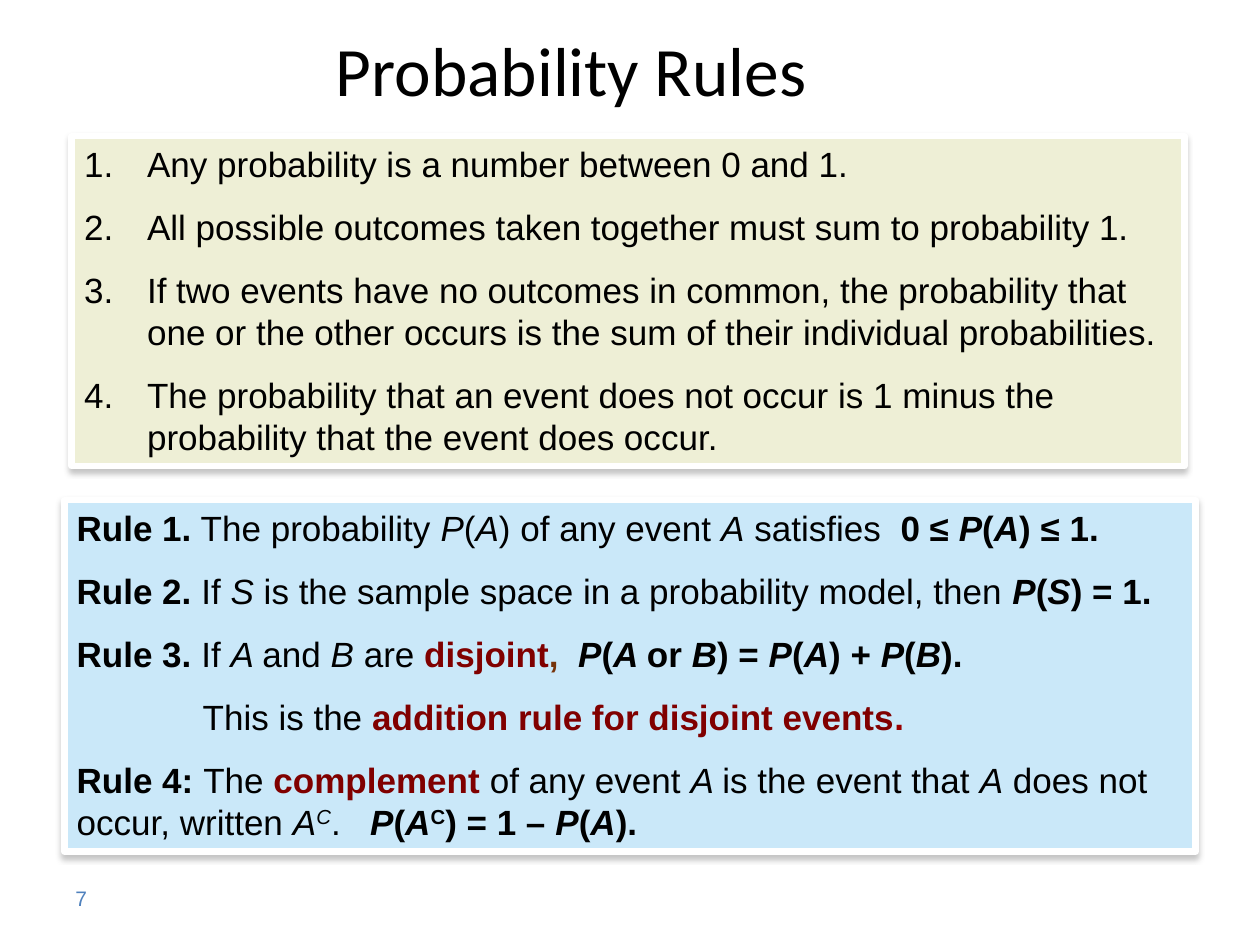
from lxml.etree import SubElement
from pptx import Presentation
from pptx.dml.color import RGBColor as RGB
from pptx.enum.shapes import MSO_SHAPE as Shape
from pptx.enum.text import MSO_ANCHOR as Anchor, MSO_AUTO_SIZE as Fit, PP_ALIGN as Align
from pptx.oxml.ns import qn
from pptx.util import Pt

INK = {"black": "000000", "red": "800000", "brown": "76330A", "wine": "990000",
       "page": "4F81BD", "sand": "EEEFD6", "sky": "CAE8F9",
       "edge": "FFFFFF", "shade": "808080"}

# Style letters: b bold, i italic, ^ superscript, r red, n brown, w wine
TONES = {"r": "red", "n": "brown", "w": "wine"}

BASICS = [
    "Any probability is a number between 0 and 1.",
    "All possible outcomes taken together must sum to probability 1.",
    "If two events have no outcomes in common, the probability that one or the "
    "other occurs is the sum of their individual probabilities.",
    "The probability that an event does not occur is 1 minus the probability "
    "that the event does occur.",
]


def prob(event, style=""):
    """Runs for P(event), up to but without the closing bracket."""
    return [("P", style + "i"), ("(", style), (event, style + "i")]


# Each rule is its left margin and its runs
RULES = [
    (0, [("Rule 1.", "b"), (" The probability ", ""), *prob("A"),
         (") of any event ", ""), ("A", "i"), (" satisfies  ", ""),
         ("0 ≤ ", "b"), *prob("A", "b"), (") ≤ 1.", "b")]),
    (0, [("Rule 2.", "b"), (" If ", ""), ("S", "i"),
         (" is the sample space in a probability model, then ", ""),
         *prob("S", "b"), (") = 1.", "b")]),
    (0, [("Rule 3. ", "b"), ("If ", ""), ("A ", "i"), ("and ", ""), ("B ", "i"),
         ("are ", ""), ("disjoint", "br"), (",  ", "bn"), *prob("A ", "b"),
         ("or ", "b"), ("B", "bi"), (") = ", "b"), *prob("A", "b"),
         (") + ", "b"), *prob("B", "b"), (").", "b")]),
    (72, [("This is the ", ""), ("addition rule for disjoint events", "br"),
          (".", "bw")]),
    (0, [("Rule 4: ", "b"), ("The ", ""), ("complement ", "br"),
         ("of any event ", ""), ("A ", "i"), ("is the event that ", ""),
         ("A", "i"), (" does not occur, written ", ""), ("A", "i"), ("C", "i^"),
         (".   ", ""), *prob("A", "b"), ("C", "b^"), (") = 1 – ", "b"),
         *prob("A", "b"), (").", "b")]),
]


def ink(font, size, tone, face="Arial"):
    font.name, font.size = face, Pt(size)
    font.color.rgb = RGB.from_string(INK[tone])


def label(slide, box, text, size, tone, face="Arial"):
    """Adds one line of text, centred in height, and returns its paragraph."""
    frame = slide.shapes.add_textbox(*map(Pt, box)).text_frame
    frame.word_wrap, frame.vertical_anchor = True, Anchor.MIDDLE
    frame.text = text
    para = frame.paragraphs[0]
    ink(para.runs[0].font, size, tone, face)
    return para


def shade(panel):
    """Gives the panel a soft shadow straight below it."""
    panel.shadow.inherit = False
    effects = panel._element.spPr.find(qn("a:effectLst"))
    outer = SubElement(effects, qn("a:outerShdw"), blurRad=str(Pt(3)),
                       dist=str(Pt(2.4)), dir="5400000", rotWithShape="0")
    color = SubElement(outer, qn("a:srgbClr"), val=INK["shade"])
    SubElement(color, qn("a:alpha"), val="45000")


def add_panel(slide, box, fill):
    """Adds a framed, shadowed panel and returns its text frame."""
    panel = slide.shapes.add_shape(Shape.RECTANGLE, *map(Pt, box))
    panel.fill.solid()
    panel.fill.fore_color.rgb = RGB.from_string(INK[fill])
    panel.line.color.rgb = RGB.from_string(INK["edge"])
    panel.line.width = Pt(3.75)
    shade(panel)
    frame = panel.text_frame
    frame.word_wrap, frame.vertical_anchor = True, Anchor.TOP
    frame.auto_size = Fit.SHAPE_TO_FIT_TEXT
    return frame


def add_para(frame, index, runs, left=0, hang=0):
    para = frame.add_paragraph() if index else frame.paragraphs[0]
    para.alignment, para.space_after = Align.LEFT, Pt(12)
    props = para._p.get_or_add_pPr()
    props.set("marL", str(Pt(left)))
    props.set("indent", str(Pt(-hang)))
    for text, style in runs:
        run = para.add_run()
        run.text = text
        tone = next((TONES[s] for s in style if s in TONES), "black")
        ink(run.font, 20, tone)
        run.font.bold, run.font.italic = "b" in style, "i" in style
        if "^" in style:
            run._r.get_or_add_rPr().set("baseline", "30000")
    return props


def basics(slide, box):
    frame = add_panel(slide, box, "sand")
    for i, text in enumerate(BASICS):
        props = add_para(frame, i, [(text, "")], 36, 36)
        SubElement(props, qn("a:buFont"), typeface="+mj-lt")
        SubElement(props, qn("a:buAutoNum"), type="arabicPeriod")


def rules(slide, box):
    frame = add_panel(slide, box, "sky")
    for i, (left, runs) in enumerate(RULES):
        add_para(frame, i, runs, left)


def main():
    deck = Presentation()
    deck.slide_width, deck.slide_height = Pt(720), Pt(540)
    slide = deck.slides.add_slide(deck.slide_layouts[6])
    page = label(slide, (36, 500.4, 168, 28.8), "7", 12, "page")
    page.line_spacing = 0.8
    title = label(slide, (41, 12.2, 571, 54.7), "Probability Rules", 39.6,
                  "black", "Calibri")
    title.alignment = Align.CENTER
    basics(slide, (41, 77.8, 635.8, 188.6))
    rules(slide, (36.7, 285.8, 646.6, 200.9))
    deck.save("out.pptx")


if __name__ == "__main__":
    main()
